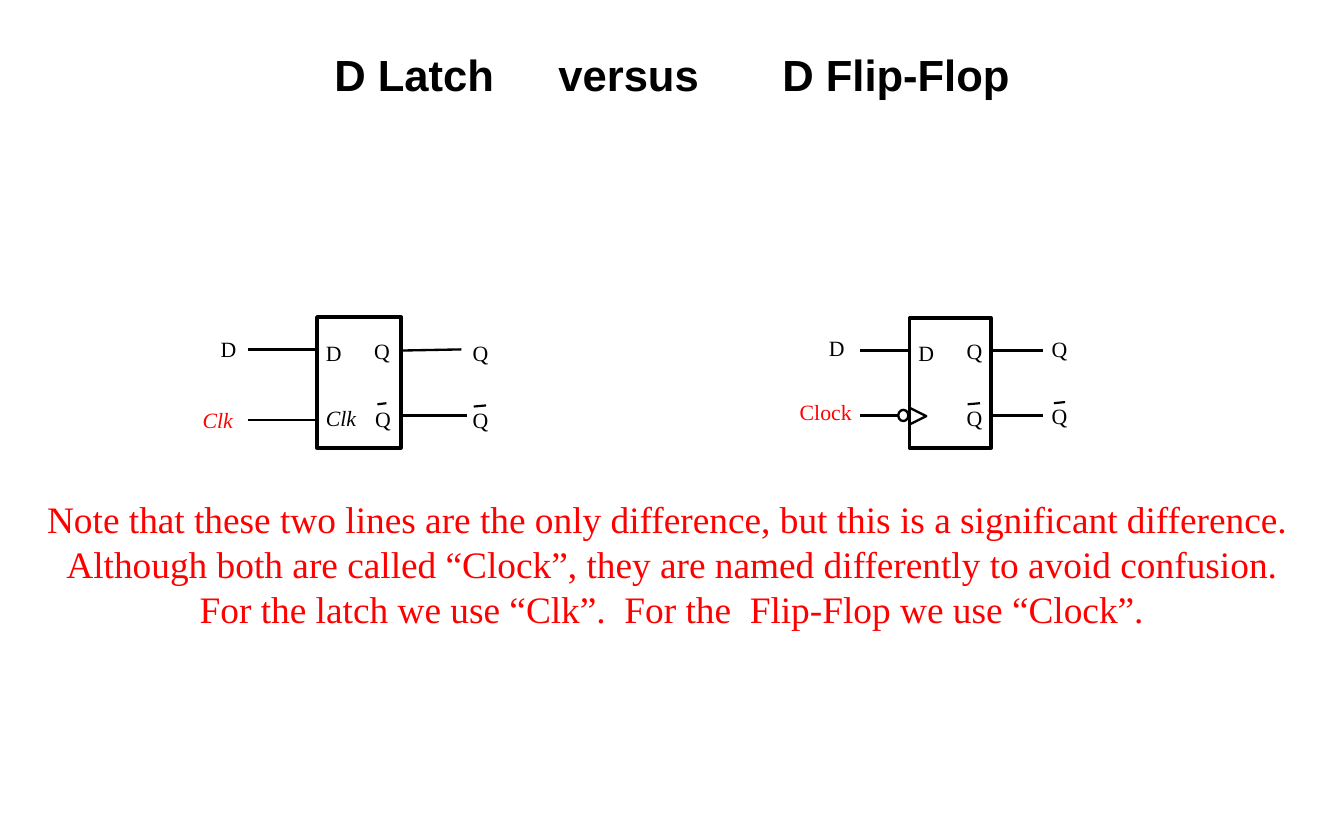
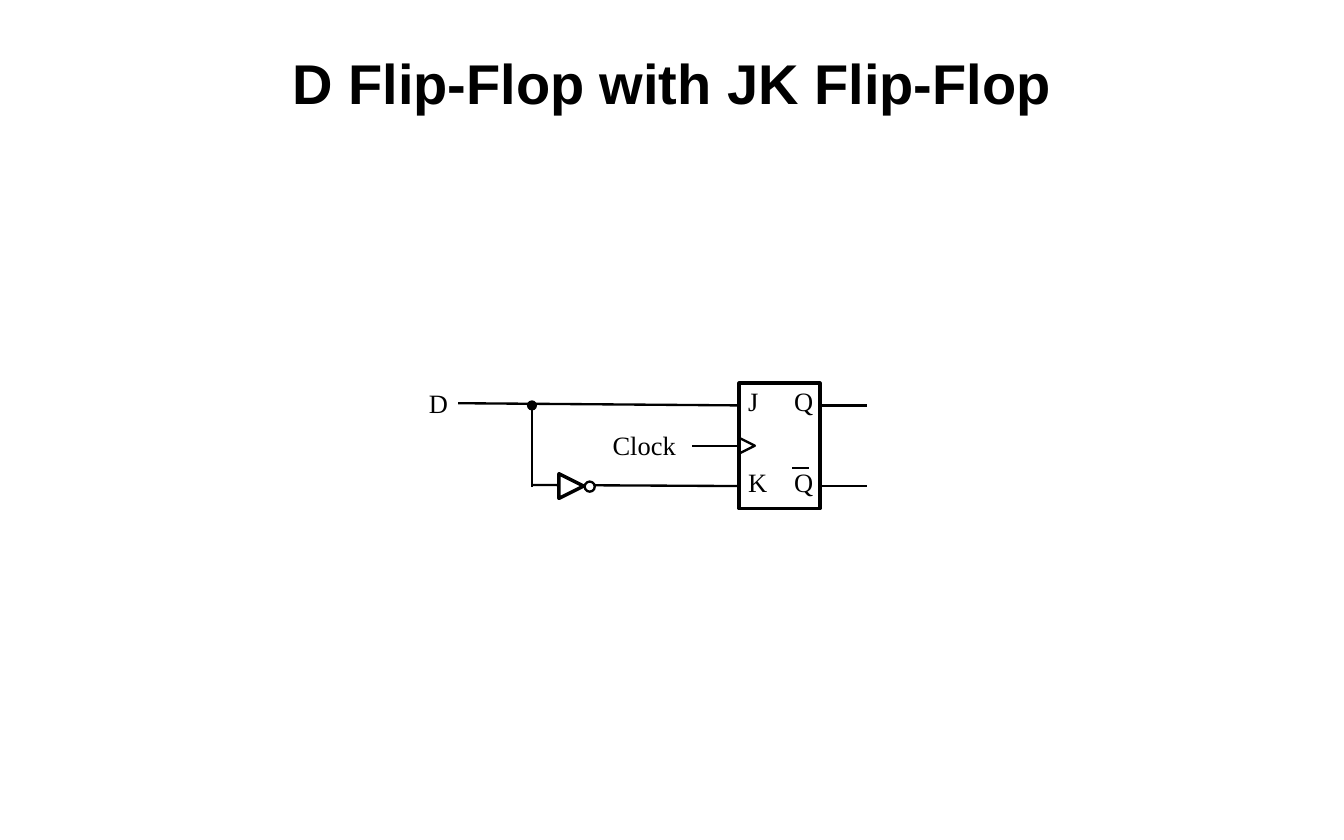
from dataclasses import dataclass

import pptx
import pptx.dml.color
import pptx.dml.fill
import pptx.enum.shapes
import pptx.enum.text
import pptx.oxml.ns
import pptx.shapes.autoshape
import pptx.shapes.connector
import pptx.shapes.group
import pptx.slide
import pptx.text.text
import pptx.util
from lxml import etree
from pptx.util import Inches

Color = pptx.dml.color.RGBColor


@dataclass(frozen=True)
class Theme:
    ink: Color = Color(0, 0, 0)
    paper: Color = Color(255, 255, 255)
    accent: Color = Color(255, 0, 0)
    title_font: str = "Arial"
    text_font: str = "Times New Roman"
    versus_title_size: float = 28
    title_size: float = 36
    note_size: float = 24
    small_label_size: float = 14
    large_label_size: float = 17
    wire_weight: float = 1.5
    bar_weight: float = 1.38
    outline_weight: float = 2.25
    dot_weight: float = 0.75


THEME = Theme()


@dataclass(frozen=True)
class Box:
    left: float
    top: float
    width: float
    height: float
    fill: Color | None = THEME.paper
    weight: float = THEME.outline_weight


@dataclass(frozen=True)
class Wire:
    start_x: float
    start_y: float
    end_x: float
    end_y: float
    weight: float = THEME.wire_weight
    meets_block: bool = False


@dataclass(frozen=True)
class Triangle:
    left: float
    top: float
    size: float
    closed: bool = False
    weight: float = THEME.wire_weight


@dataclass(frozen=True)
class Label:
    text: str
    left: float
    top: float
    width: float
    color: Color = THEME.ink
    italic: bool = False


@dataclass(frozen=True)
class Diagram:
    label_size: float
    label_height: float
    block: Box
    wires: tuple[Wire, ...]
    labels: tuple[Label, ...]
    triangles: tuple[Triangle, ...] = ()
    circles: tuple[Box, ...] = ()


def bar(start_x: float, start_y: float, end_x: float, end_y: float) -> Wire:
    return Wire(start_x, start_y, end_x, end_y, THEME.bar_weight)


LATCH = Diagram(
    label_size=THEME.small_label_size,
    label_height=0.24,
    block=Box(2.83, 2.83, 0.75, 1.17),
    wires=(
        Wire(2.21, 3.12, 2.83, 3.12),
        Wire(2.21, 3.75, 2.83, 3.75),
        Wire(4.12, 3.12, 3.58, 3.13),
        Wire(4.17, 3.71, 3.58, 3.71),
        bar(4.34, 3.62, 4.23, 3.63),
        bar(3.45, 3.6, 3.37, 3.61),
    ),
    labels=(
        Label("D", 1.97, 3, 0.19),
        Label("Clk", 1.81, 3.63, 0.33, THEME.accent, True),
        Label("D", 2.91, 3.03, 0.19),
        Label("Clk", 2.91, 3.61, 0.33, italic=True),
        Label("Q", 3.34, 3.02, 0.19),
        Label("Q", 3.35, 3.62, 0.19),
        Label("Q", 4.22, 3.03, 0.19),
        Label("Q", 4.22, 3.63, 0.19),
    ),
)

D_FLIP_FLOP = Diagram(
    label_size=THEME.small_label_size,
    label_height=0.24,
    block=Box(8.12, 2.84, 0.73, 1.16),
    wires=(
        Wire(7.68, 3.13, 8.12, 3.13),
        Wire(7.68, 3.71, 8.02, 3.71),
        Wire(9.31, 3.13, 8.85, 3.13),
        Wire(9.31, 3.71, 8.85, 3.71),
        bar(8.75, 3.6, 8.64, 3.61),
        bar(9.51, 3.59, 9.41, 3.6),
    ),
    labels=(
        Label("D", 7.4, 2.99, 0.19),
        Label("Clock", 7.14, 3.56, 0.52, THEME.accent),
        Label("D", 8.2, 3.03, 0.19),
        Label("Q", 8.63, 3.02, 0.19),
        Label("Q", 8.63, 3.61, 0.19),
        Label("Q", 9.39, 3, 0.19),
        Label("Q", 9.39, 3.6, 0.19),
    ),
    triangles=(Triangle(8.12, 3.64, 0.15),),
    circles=(Box(8.02, 3.66, 0.09, 0.1, None, THEME.wire_weight),),
)

JK_FLIP_FLOP = Diagram(
    label_size=THEME.large_label_size,
    label_height=0.29,
    block=Box(6.6, 3.42, 0.72, 1.12),
    wires=(
        Wire(4.09, 3.6, 6.6, 3.62),
        Wire(4.75, 4.33, 6.6, 4.34),
        Wire(6.18, 3.98, 6.6, 3.98, meets_block=True),
        Wire(7.74, 3.62, 7.32, 3.62),
        Wire(7.74, 4.34, 7.32, 4.34),
        Wire(7.22, 4.18, 7.07, 4.18),
        Wire(4.75, 4.35, 4.75, 3.61),
    ),
    labels=(
        Label("D", 3.83, 3.46, 0.17),
        Label("Clock", 5.47, 3.83, 0.57),
        Label("J", 6.68, 3.44, 0.09),
        Label("K", 6.68, 4.16, 0.17),
        Label("Q", 7.09, 3.44, 0.17),
        Label("Q", 7.09, 4.16, 0.17),
    ),
    triangles=(
        Triangle(6.6, 3.91, 0.14),
        Triangle(4.99, 4.23, 0.22, True, THEME.outline_weight),
    ),
    circles=(
        Box(4.71, 3.58, 0.08, 0.08, THEME.ink, THEME.dot_weight),
        Box(5.22, 4.3, 0.09, 0.09, THEME.paper, THEME.wire_weight),
    ),
)

NOTE = (
    "Note that these two lines are the only difference, but this is a significant difference. \n"
    "Although both are called “Clock”, they are named differently to avoid confusion.\n"
    "For the latch we use “Clk”.  For the  Flip-Flop we use “Clock”."
)


def format_text(
    frame: pptx.text.text.TextFrame, font_name: str, size: float, color: Color,
    bold: bool = False, italic: bool = False, centered: bool = False,
) -> None:
    alignment = pptx.enum.text.PP_ALIGN
    for paragraph in frame.paragraphs:
        paragraph.alignment = alignment.CENTER if centered else alignment.LEFT
        for run in paragraph.runs:
            run.font.name = font_name
            run.font.size = pptx.util.Pt(size)
            run.font.color.rgb = color
            run.font.bold = bold
            run.font.italic = italic


def format_shape(shape: pptx.shapes.autoshape.Shape, fill: Color | None, weight: float) -> None:
    shape.shadow.inherit = False
    if fill is None:
        shape.fill.background()
    else:
        shape.fill.solid()
        shape.fill.fore_color.rgb = fill
    shape.line.color.rgb = THEME.ink
    shape.line.width = pptx.util.Pt(weight)


def draw_box(
    group: pptx.shapes.group.GroupShape, box: Box, kind: pptx.enum.shapes.MSO_SHAPE,
) -> pptx.shapes.autoshape.Shape:
    shape = group.shapes.add_shape(
        kind, Inches(box.left), Inches(box.top), Inches(box.width), Inches(box.height))
    format_shape(shape, box.fill, box.weight)
    return shape


def draw_wire(
    group: pptx.shapes.group.GroupShape, wire: Wire, block: pptx.shapes.autoshape.Shape,
) -> None:
    connector = group.shapes.add_connector(
        pptx.enum.shapes.MSO_CONNECTOR.STRAIGHT,
        Inches(wire.start_x), Inches(wire.start_y), Inches(wire.end_x), Inches(wire.end_y))
    if wire.meets_block:
        connector.end_connect(block, 1)
    connector.line.color.rgb = THEME.ink
    connector.line.width = pptx.util.Pt(wire.weight)
    etree.SubElement(connector._element.spPr, pptx.oxml.ns.qn("a:effectLst"))


def draw_triangle(group: pptx.shapes.group.GroupShape, triangle: Triangle) -> None:
    left, top, size = Inches(triangle.left), Inches(triangle.top), Inches(triangle.size)
    builder = group.shapes.build_freeform(left, top + size)
    builder.add_line_segments(
        [(left + size, top + size // 2), (left, top)], close=triangle.closed)
    fill = THEME.paper if triangle.closed else None
    format_shape(builder.convert_to_shape(), fill, triangle.weight)


def draw_label(group: pptx.shapes.group.GroupShape, label: Label, size: float, height: float) -> None:
    shape = group.shapes.add_textbox(
        Inches(label.left), Inches(label.top), Inches(label.width), Inches(height))
    frame = shape.text_frame
    frame.margin_left = frame.margin_right = frame.margin_top = frame.margin_bottom = 0
    frame.word_wrap = False
    frame.auto_size = pptx.enum.text.MSO_AUTO_SIZE.SHAPE_TO_FIT_TEXT
    frame.text = label.text
    format_text(frame, THEME.text_font, size, label.color, italic=label.italic)


def draw_diagram(slide: pptx.slide.Slide, diagram: Diagram) -> None:
    group = slide.shapes.add_group_shape()
    block = draw_box(group, diagram.block, pptx.enum.shapes.MSO_SHAPE.RECTANGLE)
    for wire in diagram.wires:
        draw_wire(group, wire, block)
    for triangle in diagram.triangles:
        draw_triangle(group, triangle)
    for circle in diagram.circles:
        draw_box(group, circle, pptx.enum.shapes.MSO_SHAPE.OVAL)
    for label in diagram.labels:
        draw_label(group, label, diagram.label_size, diagram.label_height)


def draw_note(slide: pptx.slide.Slide) -> None:
    shape = slide.shapes.add_textbox(Inches(0.27), Inches(4.38), Inches(11.46), Inches(1.31))
    frame = shape.text_frame
    frame.word_wrap = False
    frame.auto_size = pptx.enum.text.MSO_AUTO_SIZE.SHAPE_TO_FIT_TEXT
    frame.text = NOTE
    format_text(frame, THEME.text_font, THEME.note_size, THEME.accent, centered=True)


def add_titled_slide(
    presentation: pptx.presentation.Presentation, text: str, size: float,
    tab_stops: tuple[float, ...] = (),
) -> pptx.slide.Slide:
    slide = presentation.slides.add_slide(presentation.slide_layouts[5])
    title = slide.shapes.title
    title.left, title.top, title.width, title.height = (
        Inches(1), Inches(0.33), Inches(10), Inches(0.67))
    frame = title.text_frame
    frame.auto_size = pptx.enum.text.MSO_AUTO_SIZE.NONE
    frame.vertical_anchor = pptx.enum.text.MSO_ANCHOR.TOP
    frame.margin_top = Inches(0.1)
    frame.text = text
    format_text(frame, THEME.title_font, size, THEME.ink, bold=True, centered=True)
    if tab_stops:
        qualified = pptx.oxml.ns.qn
        properties = frame.paragraphs[0]._p.get_or_add_pPr()
        tab_list = etree.SubElement(properties, qualified("a:tabLst"))
        for stop in tab_stops:
            etree.SubElement(tab_list, qualified("a:tab"), pos=str(Inches(stop)), algn="l")
    return slide


def main() -> None:
    presentation = pptx.Presentation()
    presentation.slide_width = Inches(12)
    presentation.slide_height = Inches(7.5)

    comparison = add_titled_slide(
        presentation, "D Latch\tversus\tD Flip-Flop", THEME.versus_title_size, (2, 4))
    draw_diagram(comparison, LATCH)
    draw_diagram(comparison, D_FLIP_FLOP)
    draw_note(comparison)

    conversion = add_titled_slide(presentation, "D Flip-Flop with JK Flip-Flop", THEME.title_size)
    draw_diagram(conversion, JK_FLIP_FLOP)

    presentation.save("out.pptx")


if __name__ == "__main__":
    main()
